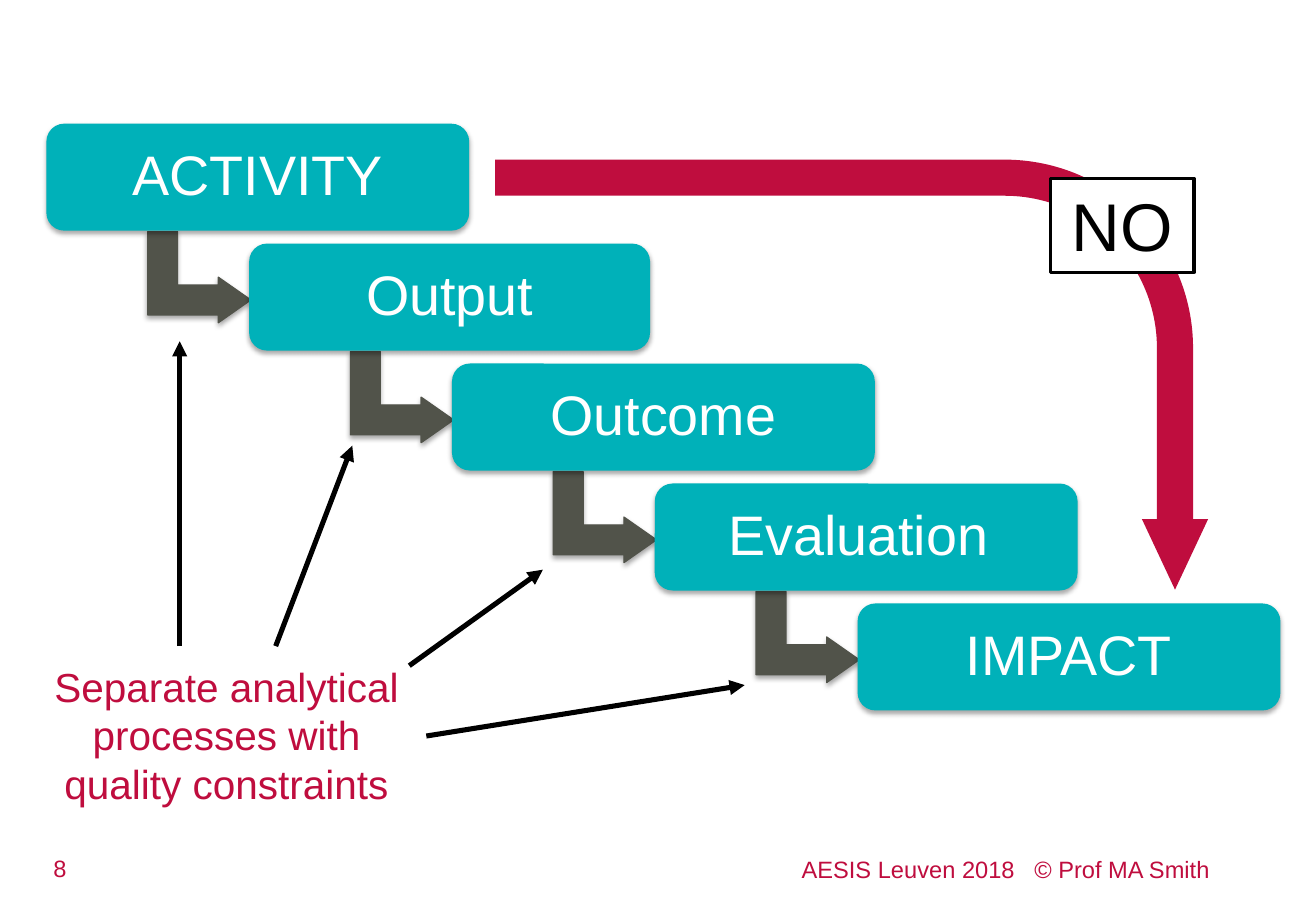
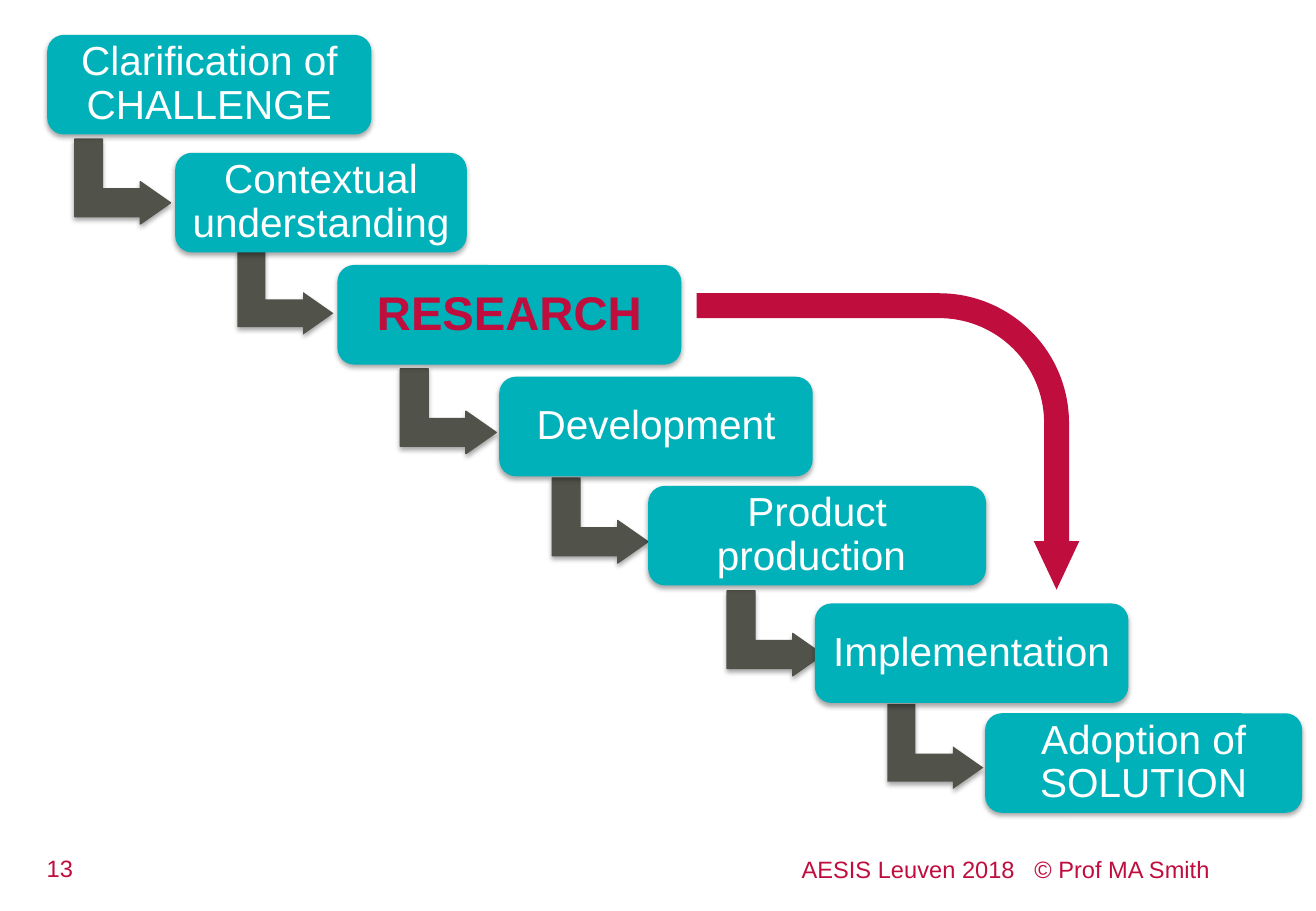
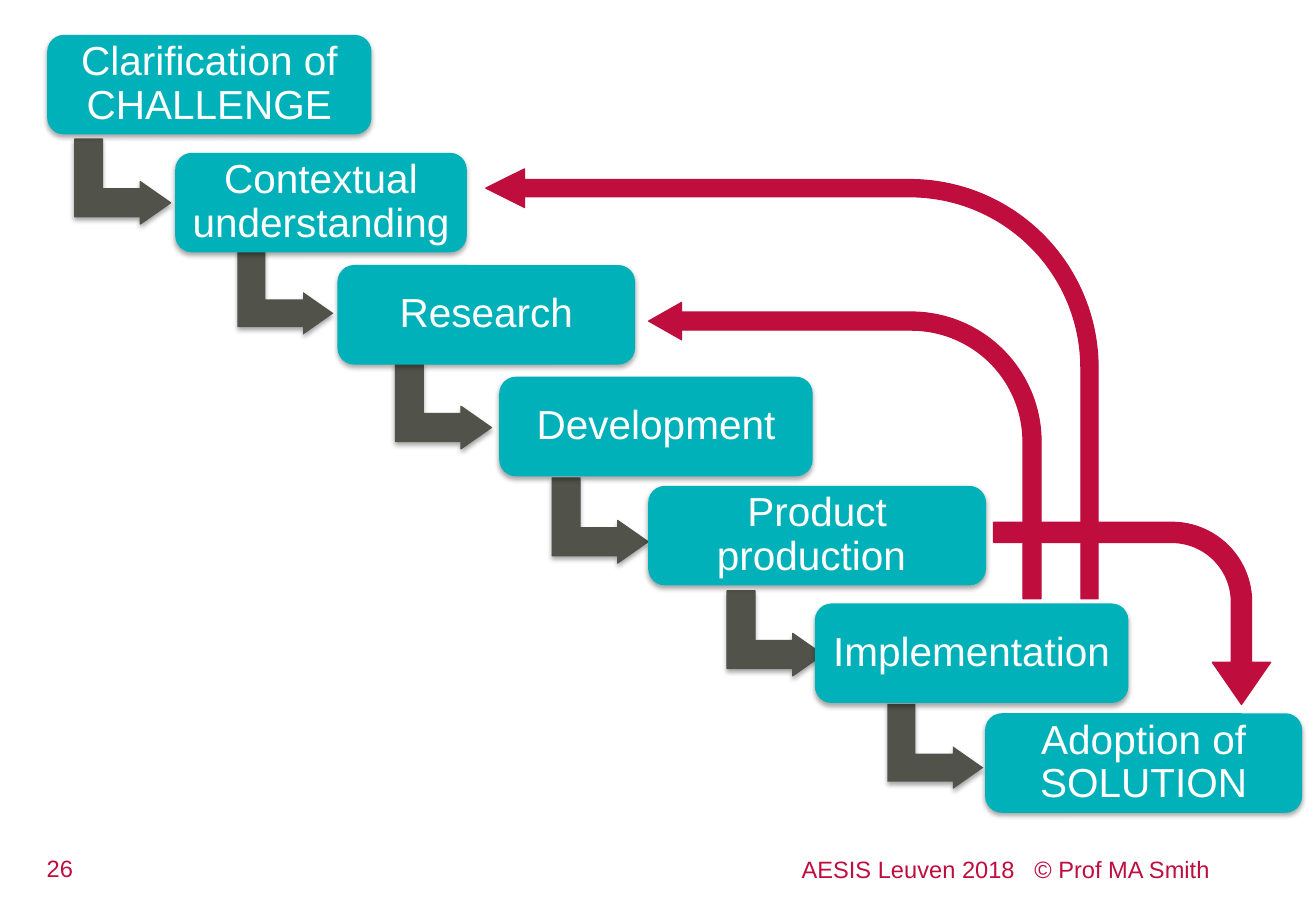
from dataclasses import dataclass, replace

from lxml import etree
from pptx import Presentation
from pptx.dml.color import RGBColor
from pptx.enum.shapes import MSO_CONNECTOR, MSO_SHAPE
from pptx.enum.text import MSO_ANCHOR, PP_ALIGN
from pptx.oxml.ns import qn
from pptx.util import Pt

ROUNDED = MSO_SHAPE.ROUNDED_RECTANGLE
RECTANGLE = MSO_SHAPE.RECTANGLE
ELBOW = MSO_SHAPE.BENT_UP_ARROW
BENT_ARROW = MSO_SHAPE.BENT_ARROW
STRAIGHT = MSO_CONNECTOR.STRAIGHT
CENTER, RIGHT = PP_ALIGN.CENTER, PP_ALIGN.RIGHT
MIDDLE, TOP = MSO_ANCHOR.MIDDLE, MSO_ANCHOR.TOP


@dataclass(frozen=True)
class Theme:
    font: str = "Arial"
    teal: str = "00B1B9"
    crimson: str = "BF0D3E"
    grey: str = "51534A"
    white: str = "FFFFFF"
    black: str = "000000"
    footer_size: int = 14
    body_size: int = 24
    highlight_size: int = 28
    stage_size: int = 33
    label_size: int = 40


THEME = Theme()
FOOTER = "AESIS Leuven 2018   © Prof MA Smith"
FRAME = {"word_wrap": True, "vertical_anchor": TOP}
STEP_FRAME = {
    "word_wrap": True,
    "vertical_anchor": MIDDLE,
    "margin_left": Pt(4),
    "margin_right": Pt(4),
    "margin_top": 0,
    "margin_bottom": 0,
}
STEP_PARAGRAPH = {"alignment": CENTER, "line_spacing": 0.9}


@dataclass(frozen=True)
class Step:
    text: str
    left: float
    top: float
    width: float
    elbow: tuple = None
    elbow_line: bool = True
    size: int = THEME.body_size
    color: str = THEME.white
    bold: bool = False


@dataclass(frozen=True)
class Cascade:
    box_height: float
    elbow_width: float
    elbow_height: float


def set_values(target, values):
    for name, value in values.items():
        setattr(target, name, value)


def points(*lengths):
    return [Pt(length) for length in lengths]


def write_text(shape, text, size, color, frame=FRAME, paragraph_format=None, bold=False):
    set_values(shape.text_frame, frame)
    paragraph = shape.text_frame.paragraphs[0]
    set_values(paragraph, paragraph_format or {"alignment": CENTER})
    run = paragraph.add_run()
    run.text = text
    set_values(run.font, {"name": THEME.font, "size": Pt(size), "bold": bold})
    run.font.color.rgb = RGBColor.from_string(color)


def add_text(slide, box, text, size, **formats):
    text_box = slide.shapes.add_textbox(*points(*box))
    write_text(text_box, text, size, THEME.crimson, **formats)


def add_filled(slide, kind, box, fill, line=None, line_width=0.75, adjustments=(), rotation=0):
    shape = slide.shapes.add_shape(kind, *points(*box))
    set_values(shape, {"rotation": rotation})
    shape.shadow.inherit = False
    shape.fill.solid()
    shape.fill.fore_color.rgb = RGBColor.from_string(fill)
    if line:
        shape.line.color.rgb = RGBColor.from_string(line)
        shape.line.width = Pt(line_width)
    else:
        shape.line.fill.background()
    for index, value in enumerate(adjustments):
        shape.adjustments[index] = value
    return shape


def add_soft_shadow(shape):
    effects = shape.element.spPr.find(qn("a:effectLst"))
    shadow = etree.SubElement(
        effects, qn("a:outerShdw"),
        blurRad=str(Pt(3.1)), dist=str(Pt(1.8)), dir="5400000", rotWithShape="0",
    )
    color = etree.SubElement(shadow, qn("a:srgbClr"), val=THEME.black)
    etree.SubElement(color, qn("a:alpha"), val="35000")


def add_cascade(slide, cascade, steps):
    for step in steps:
        if step.elbow:
            elbow = add_filled(
                slide, ELBOW, (*step.elbow, cascade.elbow_width, cascade.elbow_height),
                THEME.grey, line=THEME.grey if step.elbow_line else None,
                adjustments=(0.328, 0.25, 0.358), rotation=90,
            )
            add_soft_shadow(elbow)
        box = add_filled(
            slide, ROUNDED, (step.left, step.top, step.width, cascade.box_height),
            THEME.teal, adjustments=(0.167,),
        )
        add_soft_shadow(box)
        write_text(box, step.text, step.size, step.color, STEP_FRAME, STEP_PARAGRAPH, step.bold)


def add_forward_arrow(slide, box, adjustments=(0.084, 0.077, 0.164, 0.438), line=None):
    add_filled(slide, BENT_ARROW, box, THEME.crimson, line=line, adjustments=adjustments, rotation=90)


def add_feedback_arrow(slide, box, adjustments):
    arrow = add_filled(
        slide, BENT_ARROW, box, THEME.crimson, line=THEME.crimson, adjustments=adjustments
    )
    arrow.element.spPr.xfrm.set("flipH", "1")


def add_pointer(slide, start, end):
    connector = slide.shapes.add_connector(STRAIGHT, *points(*start, *end))
    connector.line.color.rgb = RGBColor.from_string(THEME.black)
    connector.line.width = Pt(3)
    etree.SubElement(connector.line._get_or_add_ln(), qn("a:tailEnd"), type="triangle")
    etree.SubElement(connector.element.spPr, qn("a:effectLst"))


def add_slide(presentation, number):
    slide = presentation.slides.add_slide(presentation.slide_layouts[6])
    add_text(slide, (10, 502.5, 51, 24.5), str(number), THEME.footer_size)
    add_text(
        slide, (248.4, 508.3, 475.9, 18.7), FOOTER, THEME.footer_size,
        frame={"word_wrap": True, "vertical_anchor": MIDDLE},
        paragraph_format={"alignment": RIGHT, "line_spacing": 0.6},
    )
    return slide


def impact_steps():
    stages = ("ACTIVITY", "Output", "Outcome", "Evaluation ", "IMPACT")
    steps = []
    for index, text in enumerate(stages):
        left, top = 27.5 + 120.2 * index, 73.3 + 71.1 * index
        width = 237.6 if text == "Output" else 250.6
        elbow = (left + 63.6, top + 60.4) if index < len(stages) - 1 else None
        steps.append(Step(text, left, top, width, elbow, size=THEME.stage_size))
    return steps


def innovation_steps(research):
    return [
        Step("Clarification of CHALLENGE", 28, 20.7, 192.2, (47.5, 79.2)),
        Step("Contextual understanding", 103.9, 90.6, 172.8, (144, 144.7), elbow_line=False),
        research,
        Step("Development", 295.9, 223.3, 185.8, (330.5, 280.1)),
        Step("Product production ", 384.2, 288, 200.2, (434.2, 347)),
        Step("Implementation", 483, 357.7, 185.8, (529.2, 414), elbow_line=False),
        Step("Adoption of SOLUTION", 583.9, 422.8, 187.9),
    ]


def build_impact_slide(presentation):
    slide = add_slide(presentation, 8)
    add_cascade(slide, Cascade(63.4, 54, 61.2), impact_steps())
    add_text(
        slide, (15.8, 388.8, 236.9, 94.3),
        "Separate analytical processes with quality constraints", THEME.body_size,
    )
    pointers = (
        ((106.5, 383), (106.5, 202.3)),
        ((163.4, 383), (208.8, 264.2)),
        ((242.6, 394.6), (321.8, 337.7)),
        ((252.7, 436.3), (441.4, 406.1)),
    )
    for start, end in pointers:
        add_pointer(slide, start, end)
    add_forward_arrow(slide, (377.3, 10.8, 254.9, 422.6))
    label = add_filled(slide, RECTANGLE, (622.8, 105.8, 85, 55.6), THEME.white, THEME.black, 2)
    write_text(label, "NO", THEME.label_size, THEME.black)


def build_research_slide(presentation, research):
    slide = add_slide(presentation, 13)
    highlighted = replace(
        research, text="RESEARCH", width=203.8, elbow=(240.5, 215.3),
        size=THEME.highlight_size, color=THEME.crimson, bold=True,
    )
    add_cascade(slide, Cascade(59, 50.4, 56.9), innovation_steps(highlighted))
    add_forward_arrow(slide, (438.5, 148.3, 175.7, 226.8))


def build_feedback_slide(presentation, research):
    slide = add_slide(presentation, 26)
    add_cascade(slide, Cascade(59, 50.4, 56.9), innovation_steps(research))
    add_feedback_arrow(slide, (288, 100.1, 362.9, 254.9), (0.04, 0.045, 0.09, 0.438))
    add_forward_arrow(
        slide, (617, 281.5, 108, 164.2), (0.111, 0.16, 0.231, 0.438), line=THEME.crimson
    )
    add_feedback_arrow(slide, (384.5, 179.3, 232.6, 175.7), (0.061, 0.063, 0.111, 0.438))


def main():
    presentation = Presentation()
    set_values(presentation, {"slide_width": Pt(780), "slide_height": Pt(540)})
    research = Step("Research", 200, 157.1, 176.4, (237.6, 212.4))
    build_impact_slide(presentation)
    build_research_slide(presentation, research)
    build_feedback_slide(presentation, research)
    presentation.save("out.pptx")


if __name__ == "__main__":
    main()
